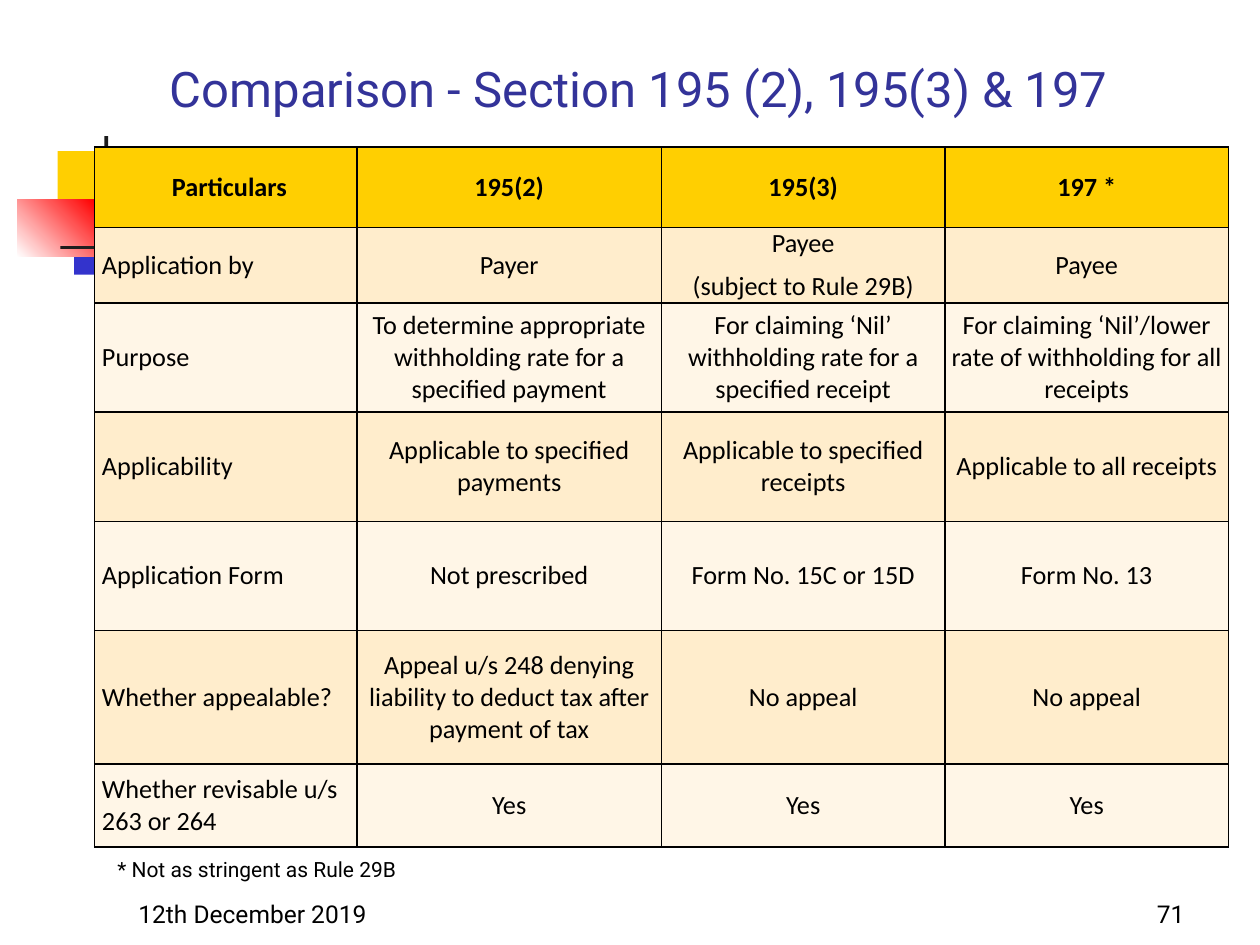
from dataclasses import dataclass

from lxml.etree import SubElement
from pptx import Presentation
from pptx.dml.color import RGBColor
from pptx.enum.shapes import MSO_SHAPE as Shape
from pptx.enum.text import MSO_ANCHOR as Anchor, PP_ALIGN as Align
from pptx.oxml.ns import qn
from pptx.util import Pt


@dataclass(frozen=True)
class Theme:
    gold: str = "FFCF01"
    blue: str = "3333CC"
    red: str = "FF0000"
    dark: str = "1C1C1C"
    white: str = "FFFFFF"
    black: str = "000000"
    title: str = "333399"
    bands: tuple = ("FFEDCC", "FFF6E7")
    head_font: str = "Roboto"
    body_font: str = "Calibri"
    title_size: int = 28
    cell_size: int = 15
    foot_size: int = 14
    note_size: int = 12


T = Theme()
COLS = (150, 174, 162, 162)
ROWS = (46, 43.2, 62.4, 62.4, 62.4, 76.3, 47.3)
CELLS = (
    ("Particulars", "195(2)", "195(3)", "197 *"),
    ("Application by", "Payer", "Payee\n(subject to Rule 29B)", "Payee"),
    ("Purpose",
     "To determine appropriate withholding rate for a specified payment",
     "For claiming ‘Nil’ withholding rate for a specified receipt",
     "For claiming ‘Nil’/lower rate of withholding for all receipts"),
    ("Applicability", "Applicable to specified payments",
     "Applicable to specified receipts", "Applicable to all receipts"),
    ("Application Form", "Not prescribed", "Form No. 15C or 15D", "Form No. 13"),
    ("Whether appealable?",
     "Appeal u/s 248 denying liability to deduct tax after payment of tax",
     "No appeal", "No appeal"),
    ("Whether revisable u/s 263 or 264", "Yes", "Yes", "Yes"),
)


def rgb(code):
    return RGBColor.from_string(code)


def add_run(para, text, font, size, color, bold=False):
    run = para.add_run()
    run.text = text
    run.font.name = font
    run.font.size = Pt(size)
    run.font.bold = bold
    run.font.color.rgb = rgb(color)


def add_bar(slide, box, start, end=None, angle=0):
    """Plain bar, or one that fades from start to end."""
    bar = slide.shapes.add_shape(Shape.RECTANGLE, *map(Pt, box))
    bar.shadow.inherit = False
    bar.line.fill.background()
    if end is None:
        bar.fill.solid()
        bar.fill.fore_color.rgb = rgb(start)
        return
    bar.fill.gradient()
    bar.fill.gradient_angle = angle
    for stop, color, spot in zip(bar.fill.gradient_stops, (start, end), (0, 1)):
        stop.color.rgb = rgb(color)
        stop.position = spot


def add_motif(slide, left, top):
    """Squares and cross lines behind the table."""
    parts = (
        ((23, 8.6, 34.6, 37.4), T.gold),
        ((53.4, 8.6, 26, 37.4), T.gold, T.white),
        ((32.4, 41.7, 33, 37.4), T.blue),
        ((62, 41.7, 28.8, 37.4), T.blue, T.white),
        ((0, 36, 44, 33), T.white, T.red, 45),
        ((49.7, 0, 2.2, 82.8), T.dark),
        ((24.5, 62.6, 648, 2.2), T.dark, T.white),
    )
    for (x, y, wide, high), *paint in parts:
        add_bar(slide, (left + x, top + y, wide, high), *paint)


def add_label(slide, box, text, size, color=T.black, align=Align.LEFT,
              anchor=Anchor.TOP):
    frame = slide.shapes.add_textbox(*map(Pt, box)).text_frame
    frame.word_wrap = True
    frame.vertical_anchor = anchor
    para = frame.paragraphs[0]
    para.alignment = align
    add_run(para, text, T.head_font, size, color)


def set_edges(cell):
    """Thin black line on all four sides, placed ahead of the fill."""
    props = cell._tc.get_or_add_tcPr()
    for side in ("a:lnL", "a:lnR", "a:lnT", "a:lnB"):
        line = SubElement(props, qn(side), w=str(Pt(1)))
        paint = SubElement(line, qn("a:solidFill"))
        SubElement(paint, qn("a:srgbClr"), val=T.black)


def fill_cell(cell, text, row, col):
    head = row == 0
    set_edges(cell)
    cell.fill.solid()
    cell.fill.fore_color.rgb = rgb(T.gold if head else T.bands[(row - 1) % 2])
    cell.vertical_anchor = Anchor.MIDDLE
    cell.margin_top = cell.margin_bottom = cell.margin_right = 0
    cell.margin_left = Pt(0 if col else 4.3)
    frame = cell.text_frame
    for num, line in enumerate(text.split("\n")):
        para = frame.add_paragraph() if num else frame.paragraphs[0]
        para.alignment = Align.CENTER if head or col else Align.LEFT
        para.space_before = Pt(6 if num else 0)
        add_run(para, line, T.body_font, T.cell_size, T.black, head)


def add_grid(slide, left, top):
    """Comparison table."""
    box = (left, top, sum(COLS), sum(ROWS))
    grid = slide.shapes.add_table(len(ROWS), len(COLS), *map(Pt, box)).table
    for col, wide in zip(grid.columns, COLS):
        col.width = Pt(wide)
    for row, high in zip(grid.rows, ROWS):
        row.height = Pt(high)
    for row, texts in enumerate(CELLS):
        for col, text in enumerate(texts):
            fill_cell(grid.cell(row, col), text, row, col)


def add_foot(slide, left, top, wide):
    """Date at the left, page number at the right."""
    size = (150, 36)
    add_label(slide, (left, top, *size), "12th December 2019", T.foot_size,
              anchor=Anchor.BOTTOM)
    add_label(slide, (left + wide - size[0], top, *size), "71", T.foot_size,
              align=Align.RIGHT, anchor=Anchor.BOTTOM)


def main():
    deck = Presentation()
    deck.slide_width, deck.slide_height = Pt(720), Pt(540)
    slide = deck.slides.add_slide(deck.slide_layouts[6])
    add_motif(slide, 10, 77.8)
    add_foot(slide, 72, 498, 612)
    add_label(slide, (90, 30, 605.5, 66), "Comparison - Section 195 (2), 195(3) & 197",
              T.title_size, T.title)
    add_grid(slide, 54, 84)
    add_label(slide, (60, 486, 318, 21.6), "* Not as stringent as Rule 29B", T.note_size)
    deck.save("out.pptx")


if __name__ == "__main__":
    main()
